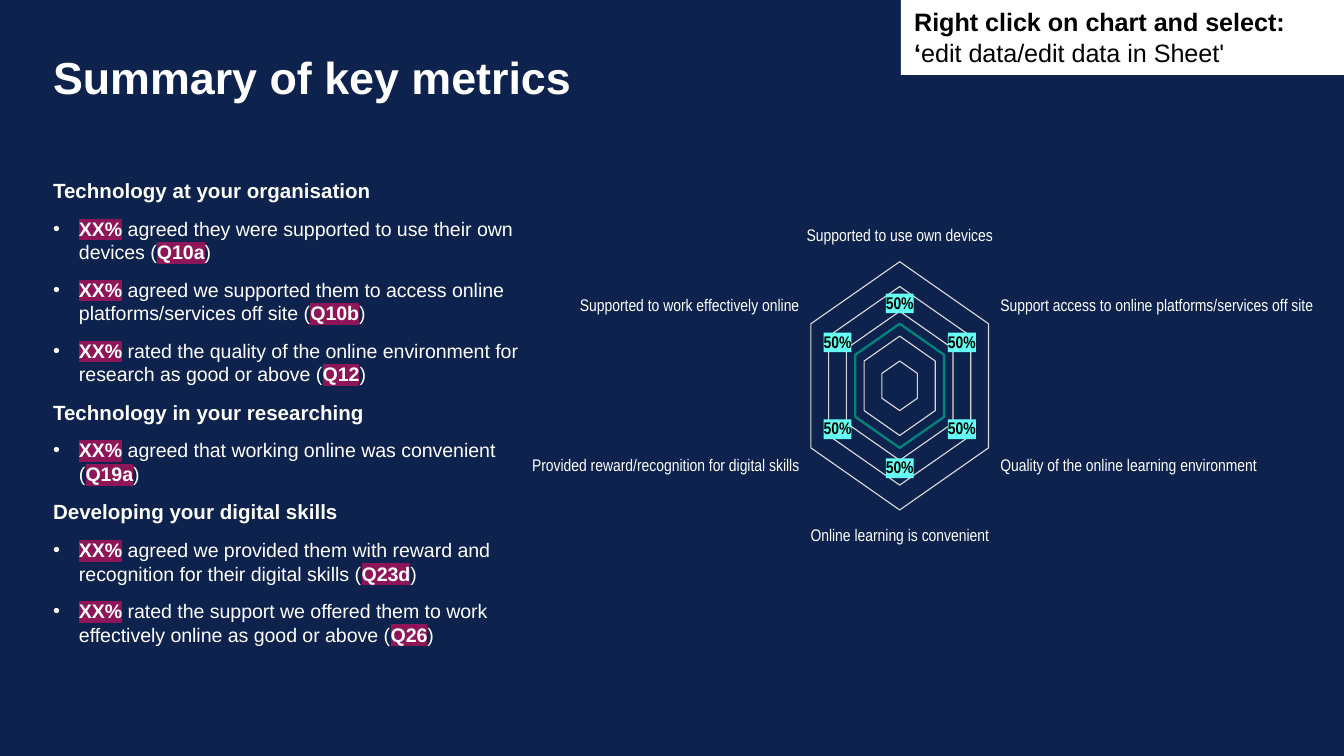
from lxml.etree import SubElement
from pptx import Presentation
from pptx.chart.data import CategoryChartData
from pptx.dml.color import RGBColor
from pptx.enum.chart import XL_CHART_TYPE, XL_TICK_LABEL_POSITION, XL_TICK_MARK
from pptx.enum.shapes import MSO_SHAPE
from pptx.enum.text import MSO_ANCHOR, PP_ALIGN
from pptx.oxml import parse_xml
from pptx.oxml.ns import nsdecls, qn
from pptx.util import Pt

PX = 914400 / 134.4
NAVY = RGBColor(0x0D, 0x22, 0x4C)
WHITE = RGBColor(0xFF, 0xFF, 0xFF)
BLACK = RGBColor(0, 0, 0)
PLUM = RGBColor(0x8E, 0x15, 0x58)
TEAL = RGBColor(0x00, 0x85, 0x7D)
AQUA = RGBColor(0x66, 0xFF, 0xF4)
GREY = RGBColor(0xD9, 0xD9, 0xD9)
FONT = "Arial"

SECTIONS = [
    ("Technology at your organisation", [
        ("agreed they were supported to use their own devices", "Q10a"),
        ("agreed we supported them to access online platforms/services off site", "Q10b"),
        ("rated the quality of the online environment for research as good or above", "Q12"),
    ]),
    ("Technology in your researching", [
        ("agreed that working online was convenient", "Q19a"),
    ]),
    ("Developing your digital skills", [
        ("agreed we provided them with reward and recognition for their digital skills", "Q23d"),
        ("rated the support we offered them to work effectively online as good or above", "Q26"),
    ]),
]
METRICS = {
    "Supported to use own devices": 0.5,
    "Support access to online platforms/services off site": 0.5,
    "Quality of the online learning environment": 0.5,
    "Online learning is convenient": 0.5,
    "Provided reward/recognition for digital skills": 0.5,
    "Supported to work effectively online": 0.5,
}


def px(*lengths):
    return [round(length * PX) for length in lengths]


def style_font(font, size, color, bold=False):
    font.name = FONT
    font.size = Pt(size)
    font.bold = bold
    font.color.rgb = color


def add_span(para, text, size=10.5, color=WHITE, bold=False, highlight=None):
    span = para.add_run()
    span.text = text
    style_font(span.font, size, color, bold)
    if highlight is not None:
        marker = parse_xml(f'<a:highlight {nsdecls("a")}><a:srgbClr val="{highlight}"/></a:highlight>')
        span.font._element.find(qn("a:solidFill")).addnext(marker)


def clear_margins(frame):
    frame.margin_left = frame.margin_top = frame.margin_right = frame.margin_bottom = 0
    frame.word_wrap = True
    frame.vertical_anchor = MSO_ANCHOR.TOP


def add_title(page, left, top, width, height):
    title = page.shapes.title
    title.left, title.top, title.width, title.height = px(left, top, width, height)
    frame = title.text_frame
    clear_margins(frame)
    para = frame.paragraphs[0]
    para.alignment = PP_ALIGN.LEFT
    add_span(para, "Summary of key metrics", size=24, bold=True)


def add_bullet(para):
    properties = para._p.get_or_add_pPr()
    indent = px(26)[0]
    properties.set("marL", str(indent))
    properties.set("indent", str(-indent))
    SubElement(properties, qn("a:buFont"), typeface=FONT)
    SubElement(properties, qn("a:buChar"), char="•")


def add_findings(page, left, top, width, height):
    frame = page.shapes.add_textbox(*px(left, top, width, height)).text_frame
    clear_margins(frame)
    frame.margin_top = px(1)[0]

    def next_para():
        first = not frame.paragraphs[0].runs
        para = frame.paragraphs[0] if first else frame.add_paragraph()
        para.line_spacing = 1.0
        para.space_before = Pt(0 if first else 7.5)
        return para

    for heading, findings in SECTIONS:
        add_span(next_para(), heading, size=11, bold=True)
        for finding, question in findings:
            para = next_para()
            add_bullet(para)
            add_span(para, "XX%", bold=True, highlight=PLUM)
            add_span(para, f" {finding} (")
            add_span(para, question, bold=True, highlight=PLUM)
            add_span(para, ")")


def style_line(line, color, width):
    line.color.rgb = color
    line.width = Pt(width)


def add_radar(page, left, top, width, height):
    data = CategoryChartData(number_format="0%")
    data.categories = list(METRICS)
    data.add_series("Series 1", list(METRICS.values()))
    chart = page.shapes.add_chart(XL_CHART_TYPE.RADAR, *px(left, top, width, height), data).chart
    chart.has_title = False
    chart.has_legend = False
    style_font(chart.font, 10, BLACK)

    plot = chart.plots[0]
    plot.vary_by_categories = False
    area = plot._element.getparent()
    for old in area.findall(qn("c:layout")):
        area.remove(old)
    area.insert(0, parse_xml(
        f'<c:layout {nsdecls("c")}><c:manualLayout><c:layoutTarget val="inner"/>'
        '<c:xMode val="edge"/><c:yMode val="edge"/><c:x val="0.2"/><c:y val="0.23"/>'
        '<c:w val="0.6"/><c:h val="0.54"/></c:manualLayout></c:layout>'))

    categories, values = chart.category_axis, chart.value_axis
    categories.major_tick_mark = XL_TICK_MARK.OUTSIDE
    categories.tick_label_position = XL_TICK_LABEL_POSITION.NEXT_TO_AXIS
    style_font(categories.tick_labels.font, 9, WHITE)
    style_line(categories.format.line, GREY, 0.75)
    values.visible = False
    values.minimum_scale, values.maximum_scale, values.major_unit = 0, 1, 0.2
    values.tick_labels.number_format = "0%"
    values.tick_labels.number_format_is_linked = False
    for axis in (categories, values):
        axis.has_major_gridlines = True
        style_line(axis.major_gridlines.format.line, GREY, 0.75)

    series = plot.series[0]
    series.smooth = False
    style_line(series.format.line, TEAL, 1.5)
    labels = series.data_labels
    labels.show_value = True
    labels.number_format = "0%"
    labels.number_format_is_linked = False
    style_font(labels.font, 9, BLACK, bold=True)
    labels._element.find(qn("c:txPr")).addprevious(parse_xml(
        f'<c:spPr {nsdecls("c", "a")}><a:solidFill><a:srgbClr val="{AQUA}"/></a:solidFill></c:spPr>'))


def add_hint(page, left, top, width, height):
    box = page.shapes.add_shape(MSO_SHAPE.RECTANGLE, *px(left, top, width, height))
    box.shadow.inherit = False
    box.fill.solid()
    box.fill.fore_color.rgb = WHITE
    box.line.fill.background()
    frame = box.text_frame
    frame.word_wrap = True
    frame.vertical_anchor = MSO_ANCHOR.TOP
    para = frame.paragraphs[0]
    para.alignment = PP_ALIGN.LEFT
    add_span(para, "Right click on chart and select: ‘", size=13.5, color=BLACK, bold=True)
    add_span(para, "edit data/edit data in Sheet'", size=13.5, color=BLACK)


def main():
    deck = Presentation()
    deck.slide_width, deck.slide_height = px(1344, 756)
    page = deck.slides.add_slide(deck.slide_layouts[5])
    page.background.fill.solid()
    page.background.fill.fore_color.rgb = NAVY
    add_title(page, 53, 50, 958, 50)
    add_findings(page, 53, 177, 508, 548)
    add_radar(page, 532, 156, 781, 460)
    add_hint(page, 901, 0, 443, 75)
    deck.save("out.pptx")


if __name__ == "__main__":
    main()
